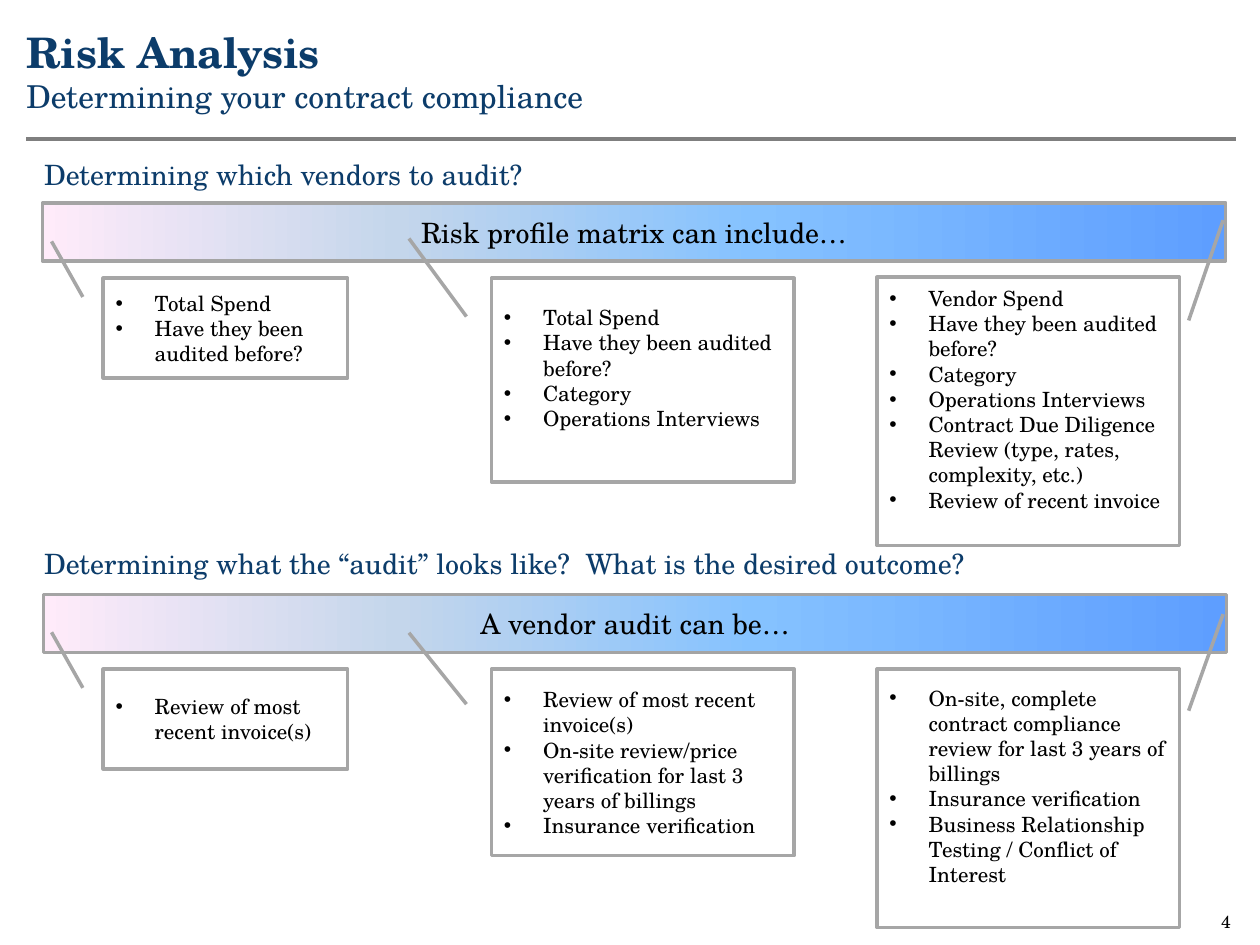
from copy import deepcopy

from lxml.etree import SubElement
from pptx import Presentation
from pptx.dml.color import RGBColor
from pptx.enum.shapes import MSO_CONNECTOR, MSO_SHAPE
from pptx.enum.text import MSO_ANCHOR as Anchor, PP_ALIGN as Align
from pptx.oxml.ns import qn
from pptx.util import Cm, Pt

FONT = "TeX Gyre Schola"
NAVY = RGBColor(0x0C, 0x3C, 0x6A)
BLACK = RGBColor(0, 0, 0)
RULE_GRAY = RGBColor(0x7F, 0x7F, 0x7F)
BAR_GRAY = RGBColor(0xA4, 0xA4, 0xA4)
CALLOUT_GRAY = RGBColor(0xA6, 0xA6, 0xA6)
BAR_STOPS = [
    (0, RGBColor(0x5E, 0x9E, 0xFF)),
    (0.4, RGBColor(0x85, 0xC2, 0xFF)),
    (0.7, RGBColor(0xC4, 0xD6, 0xEB)),
    (1, RGBColor(0xFF, 0xEB, 0xFA)),
]

# Left, width and leader-line adjustments of each callout column
COLUMNS = [
    (2.08, 4.93, (0.188, -0.083, -0.37, -0.211)),
    (9.91, 6.1, (0.188, -0.083, -0.195, -0.273)),
    (17.68, 6.1, (0.161, 1.03, -0.213, 1.144)),
]
INSET = 0.13
LIFTED_INSET = 0.63  # raises the list by half a line

# Each callout: top, height, bottom inset, items
SECTIONS = [
    ("Determining which vendors to audit?", 3.05,
     "Risk profile matrix can include…", 0.86, 4.09, [
         (5.61, 2.01, INSET, ["Total Spend", "Have they been audited before?"]),
         (5.61, 4.11, LIFTED_INSET, [
             "Total Spend", "Have they been audited before?", "Category",
             "Operations Interviews"]),
         (5.59, 5.41, LIFTED_INSET, [
             "Vendor Spend", "Have they been audited before?", "Category",
             "Operations Interviews",
             "Contract Due Diligence Review (type, rates, complexity, etc.)",
             "Review of recent invoice"]),
     ]),
    ("Determining what the “audit” looks like?  What is the desired outcome?", 10.9,
     "A vendor audit can be…", 0.88, 11.99, [
         (13.49, 2.01, INSET, ["Review of most recent invoice(s)"]),
         (13.49, 3.76, INSET, [
             "Review of most recent invoice(s)",
             "On-site review/price verification for last 3 years of billings",
             "Insurance verification"]),
         (13.49, 5.21, LIFTED_INSET, [
             "On-site, complete contract compliance review for last 3 years of billings",
             "Insurance verification",
             "Business Relationship Testing / Conflict of Interest"]),
     ]),
]


def write_para(para, text, size, color, align=Align.LEFT, bold=False):
    para.text = text
    para.alignment = align
    font = para.font
    font.name, font.size, font.bold = FONT, Pt(size), bold
    font.color.rgb = color


def clear_insets(frame):
    frame.margin_left = frame.margin_right = 0
    frame.margin_top = frame.margin_bottom = 0


def add_title(slide):
    title = slide.shapes.title
    title.left, title.top, title.width, title.height = Cm(0.53), Cm(0.53), Cm(22.99), Cm(1.8)
    frame = title.text_frame
    clear_insets(frame)
    frame.vertical_anchor = Anchor.TOP
    write_para(frame.paragraphs[0], "Risk Analysis", 24, NAVY, bold=True)
    write_para(frame.add_paragraph(), "Determining your contract compliance", 18, NAVY)


def add_rule(slide):
    rule = slide.shapes.add_connector(
        MSO_CONNECTOR.STRAIGHT, Cm(0.53), Cm(2.8), Cm(24.92), Cm(2.8))
    rule.line.color.rgb = RULE_GRAY
    rule.line.width = Pt(2)
    SubElement(rule._element.spPr, qn("a:effectLst"))


def add_heading(slide, text, top):
    box = slide.shapes.add_textbox(Cm(0.64), Cm(top), Cm(24.21), Cm(1.02))
    box.text_frame.word_wrap = True
    write_para(box.text_frame.paragraphs[0], text, 16, NAVY)


def add_outlined_shape(slide, kind, left, top, width, height, line_color):
    shape = slide.shapes.add_shape(kind, Cm(left), Cm(top), Cm(width), Cm(height))
    shape.shadow.inherit = False
    shape.line.color.rgb = line_color
    shape.line.width = Pt(2)
    shape.text_frame.word_wrap = True
    shape.text_frame.vertical_anchor = Anchor.MIDDLE
    return shape


def add_gradient_bar(slide, text, left, top):
    bar = add_outlined_shape(slide, MSO_SHAPE.RECTANGLE, left, top, 23.85, 1.17, BAR_GRAY)
    bar.fill.gradient()
    bar.fill.gradient_angle = 180
    stop_list = bar._element.spPr.find(".//" + qn("a:gsLst"))
    while len(stop_list) < len(BAR_STOPS):
        stop_list.append(deepcopy(stop_list[0]))
    for stop, (position, color) in zip(bar.fill.gradient_stops, BAR_STOPS):
        stop.position = position
        stop.color.rgb = color
    write_para(bar.text_frame.paragraphs[0], text, 16, BLACK, Align.CENTER)


def add_bullet(para):
    properties = para._p.get_or_add_pPr()
    properties.set("marL", str(Cm(0.79)))
    properties.set("indent", str(-Cm(0.79)))
    SubElement(properties, qn("a:buFont"), typeface="Arial")
    SubElement(properties, qn("a:buChar"), char="•")


def add_callout(slide, column, top, height, bottom_inset, items):
    left, width, leader = column
    callout = add_outlined_shape(
        slide, MSO_SHAPE.LINE_CALLOUT_1, left, top, width, height, CALLOUT_GRAY)
    callout.fill.background()
    for index, value in enumerate(leader):
        callout.adjustments[index] = value
    frame = callout.text_frame
    frame.margin_bottom = Cm(bottom_inset)
    for index, item in enumerate(items):
        para = frame.add_paragraph() if index else frame.paragraphs[0]
        add_bullet(para)
        write_para(para, item, 12, BLACK)


def add_page_number(slide):
    box = slide.shapes.add_textbox(Cm(24.36), Cm(18.36), Cm(0.45), Cm(0.43))
    clear_insets(box.text_frame)
    box.text_frame.word_wrap = False
    write_para(box.text_frame.paragraphs[0], "4", 10, BLACK, Align.RIGHT)


def main():
    deck = Presentation()
    deck.slide_width, deck.slide_height = Cm(25.4), Cm(19.05)
    slide = deck.slides.add_slide(deck.slide_layouts[5])
    add_rule(slide)
    add_title(slide)
    for heading, heading_top, bar_text, bar_left, bar_top, callouts in SECTIONS:
        add_heading(slide, heading, heading_top)
        add_gradient_bar(slide, bar_text, bar_left, bar_top)
        for column, callout in zip(COLUMNS, callouts):
            add_callout(slide, column, *callout)
    add_page_number(slide)
    deck.save("out.pptx")


if __name__ == "__main__":
    main()
